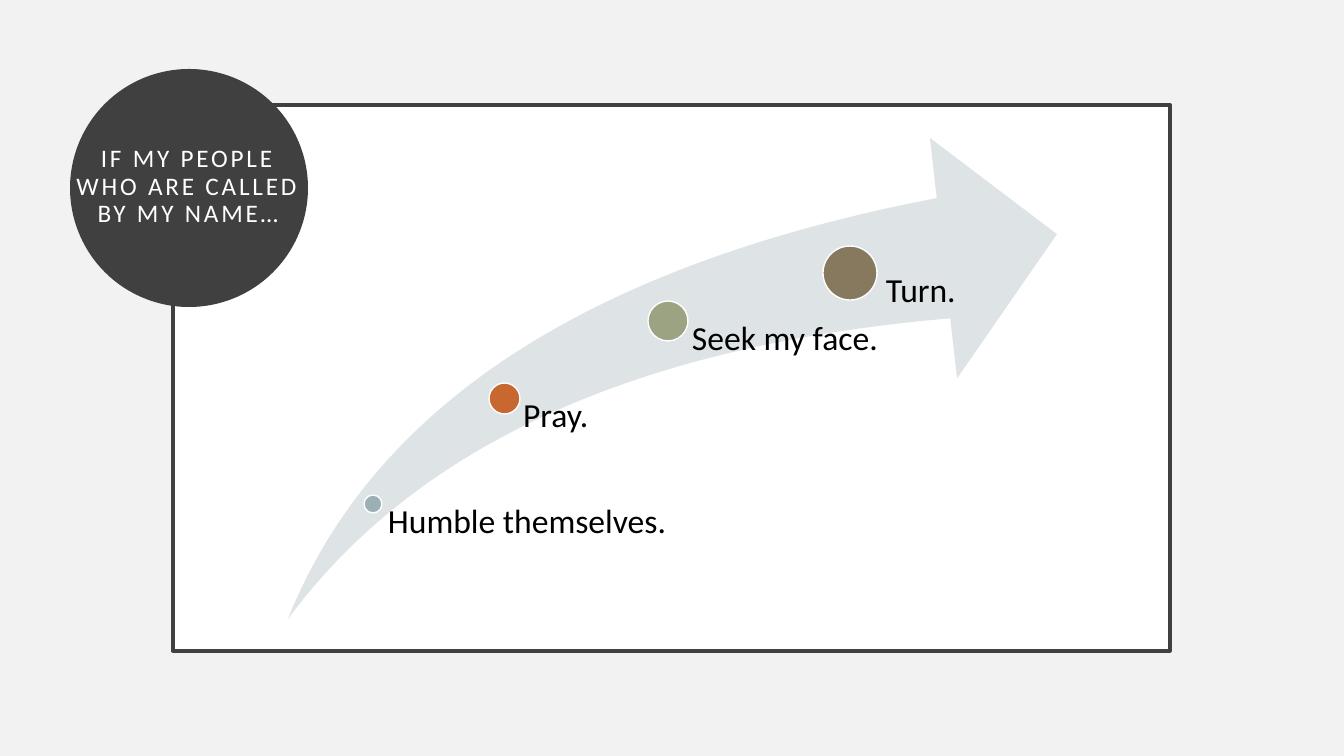
from pptx import Presentation
from pptx.dml.color import RGBColor
from pptx.enum.shapes import MSO_SHAPE as Kind
from pptx.enum.text import MSO_ANCHOR as Anchor, MSO_AUTO_SIZE as Fit, PP_ALIGN as Align
from pptx.util import Emu, Pt

HUES = {"back": "F2F2F2", "dark": "404040", "white": "FFFFFF", "black": "000000",
        "swoosh": "DEE3E5", "blue": "9BAFB5", "rust": "C96731",
        "sage": "9CA383", "tan": "87795D"}
FONT = "Calibri"
BASE = 619  # shared bottom edge of the swoosh and its labels

# Dot left, top, size and hue, then label left, width and wording
STEPS = [
    (364, 495, 18, "blue", 378, 304, "Humble themselves."),
    (489, 383, 31, "rust", 507, 161, "Pray."),
    (648, 301, 40, "sage", 671, 276, "Seek my face."),
    (823, 246, 54, "tan", 857, 161, "Turn."),
]


def px(num):
    return Emu(round(num * 914400 / 100.8))


def hue(name):
    return RGBColor.from_string(HUES[name])


def add_form(shapes, kind, box, fill, line=None, width=1):
    form = shapes.add_shape(kind, *map(px, box))
    form.shadow.inherit = False
    form.fill.solid()
    form.fill.fore_color.rgb = hue(fill)
    if line:
        form.line.color.rgb = hue(line)
        form.line.width = Pt(width)
    else:
        form.line.fill.background()
    return form


def set_text(frame, text, size, color, align, anchor, left=0):
    frame.word_wrap = True
    frame.auto_size = Fit.NONE
    frame.vertical_anchor = anchor
    frame.margin_left = px(left)
    frame.margin_top = frame.margin_right = frame.margin_bottom = 0
    para = frame.paragraphs[0]
    para.alignment = align
    para.line_spacing = 0.9
    run = para.add_run()
    run.text = text
    run.font.name = FONT
    run.font.size = Pt(size)
    run.font.color.rgb = hue(color)
    return run


def add_title(slide, text, box):
    title = slide.shapes.title
    title.left, title.top, title.width, title.height = map(px, box)
    run = set_text(title.text_frame, text, 18, "white", Align.CENTER, Anchor.MIDDLE)
    run.font._element.set("spc", "200")
    # Bring the title in front of its disc
    title.element.getparent().append(title.element)


def add_step(shapes, left, top, size, fill, start, width, text):
    add_form(shapes, Kind.OVAL, (left, top, size, size), fill, "white")
    mid = top + size // 2
    label = shapes.add_textbox(*map(px, (start, mid, width, BASE - mid)))
    set_text(label.text_frame, text, 24, "black", Align.LEFT, Anchor.TOP,
             round(size * 0.53))


def main():
    deck = Presentation()
    deck.slide_width, deck.slide_height = px(1344), px(756)
    slide = deck.slides.add_slide(deck.slide_layouts[5])
    slide.background.fill.solid()
    slide.background.fill.fore_color.rgb = hue("back")

    # Frame and title disc
    add_form(slide.shapes, Kind.RECTANGLE, (173, 105, 997, 546), "white", "dark", 2.5)
    add_form(slide.shapes, Kind.OVAL, (70, 69, 238, 238), "dark")
    add_title(slide, "IF MY PEOPLE WHO ARE CALLED BY MY NAME…", (70, 69, 236, 236))

    # Rising arrow with its steps
    group = slide.shapes.add_group_shape().shapes
    swoosh = add_form(group, Kind.SWOOSH_ARROW, (288, 138, 769, BASE - 138), "swoosh")
    swoosh.adjustments[0] = swoosh.adjustments[1] = 0.25
    for step in STEPS:
        add_step(group, *step)

    deck.save("out.pptx")


if __name__ == "__main__":
    main()
